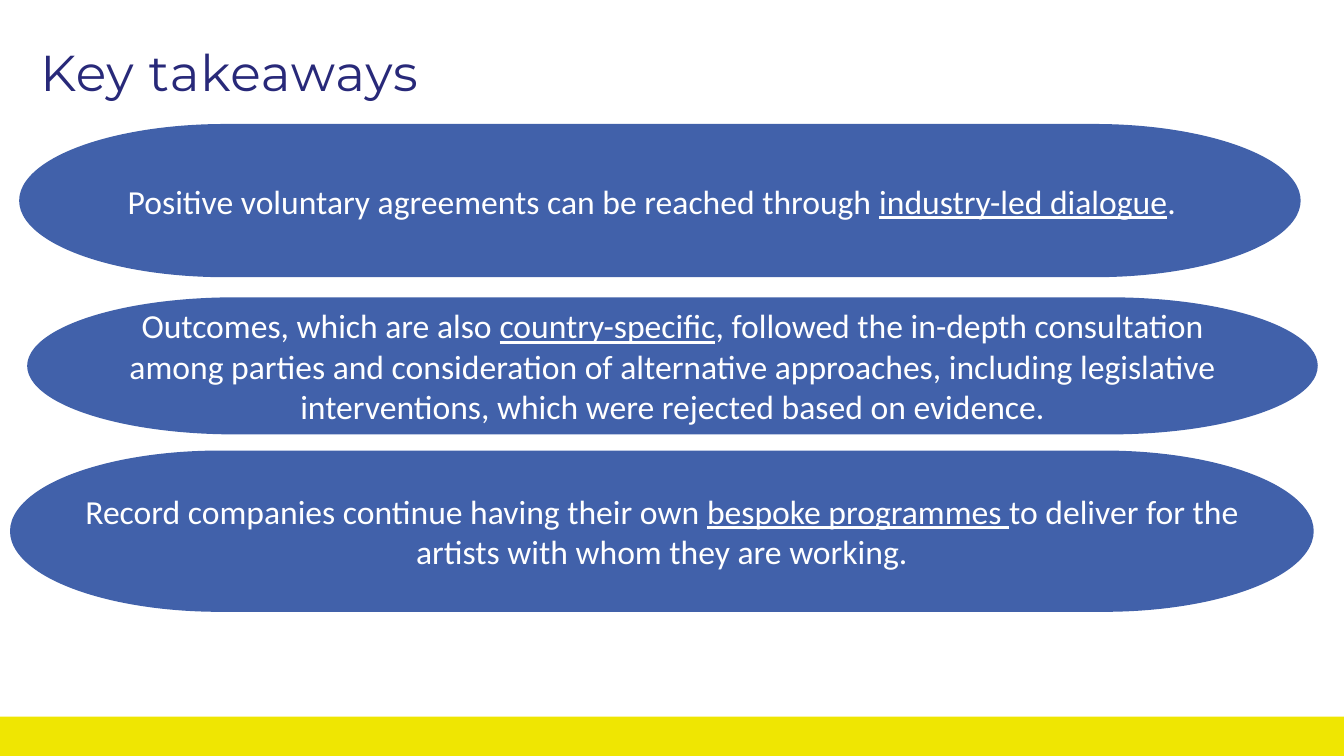
from pptx import Presentation
from pptx.dml.color import RGBColor
from pptx.enum import shapes, text
from pptx.util import Emu, Pt

PX = 9144  # 100 px to the inch
WIDTH, HEIGHT = 1333, 750
INSET = 10

# box, text before, underlined text, text after, right inset
TAKEAWAYS = [
    ((19, 123, 1271, 152),
     "Positive voluntary agreements can be reached through ",
     "industry-led dialogue", ".", 26),
    ((27, 295, 1280, 136),
     "Outcomes, which are also ", "country-specific",
     ", followed the in-depth consultation among parties and consideration of "
     "alternative approaches, including legislative interventions, which were "
     "rejected based on evidence.", INSET),
    ((10, 447, 1293, 160),
     "Record companies continue having their own ", "bespoke programmes ",
     "to deliver for the artists with whom they are working.", INSET),
]


def px(length):
    return Emu(length * PX)


def color(value):
    return RGBColor.from_string(value)


def format_font(font, name, size, value):
    font.name = name
    font.size = Pt(size)
    font.color.rgb = color(value)


def add_filled_shape(slide, kind, box, fill):
    shape = slide.shapes.add_shape(kind, *map(px, box))
    shape.shadow.inherit = False
    shape.fill.solid()
    shape.fill.fore_color.rgb = color(fill)
    shape.line.fill.background()
    return shape


def place_title(slide, box, wording):
    title = slide.shapes.title
    title.left, title.top, title.width, title.height = map(px, box)
    frame = title.text_frame
    frame.text = wording
    frame.margin_left = frame.margin_top = frame.margin_right = frame.margin_bottom = 0
    frame.auto_size = text.MSO_AUTO_SIZE.NONE
    frame.vertical_anchor = text.MSO_ANCHOR.MIDDLE
    paragraph = frame.paragraphs[0]
    paragraph.alignment = text.PP_ALIGN.LEFT
    paragraph.line_spacing = 0.8
    font = paragraph.runs[0].font
    format_font(font, "Montserrat", 36, "282979")
    paragraph.runs[0]._r.get_or_add_rPr().set("spc", "60")


def add_takeaway(slide, box, before, underlined, after, right_inset):
    pill = add_filled_shape(
        slide, shapes.MSO_SHAPE.FLOWCHART_TERMINATOR, box, "4161AA")
    frame = pill.text_frame
    frame.word_wrap = True
    frame.margin_right = px(right_inset)
    frame.vertical_anchor = text.MSO_ANCHOR.MIDDLE
    paragraph = frame.paragraphs[0]
    paragraph.alignment = text.PP_ALIGN.CENTER
    for wording in (before, underlined, after):
        run = paragraph.add_run()
        run.text = wording
        format_font(run.font, "Calibri", 24, "FFFFFF")
        run.font.underline = wording == underlined


def main():
    presentation = Presentation()
    presentation.slide_width = px(WIDTH)
    presentation.slide_height = px(HEIGHT)
    title_only = presentation.slide_layouts[5]
    slide = presentation.slides.add_slide(title_only)
    add_filled_shape(
        slide, shapes.MSO_SHAPE.RECTANGLE, (0, 711, WIDTH, HEIGHT - 711), "EFE602")
    place_title(slide, (40, 49, 1163, 54), "Key takeaways")
    for takeaway in TAKEAWAYS:
        add_takeaway(slide, *takeaway)
    presentation.save("out.pptx")


if __name__ == "__main__":
    main()
